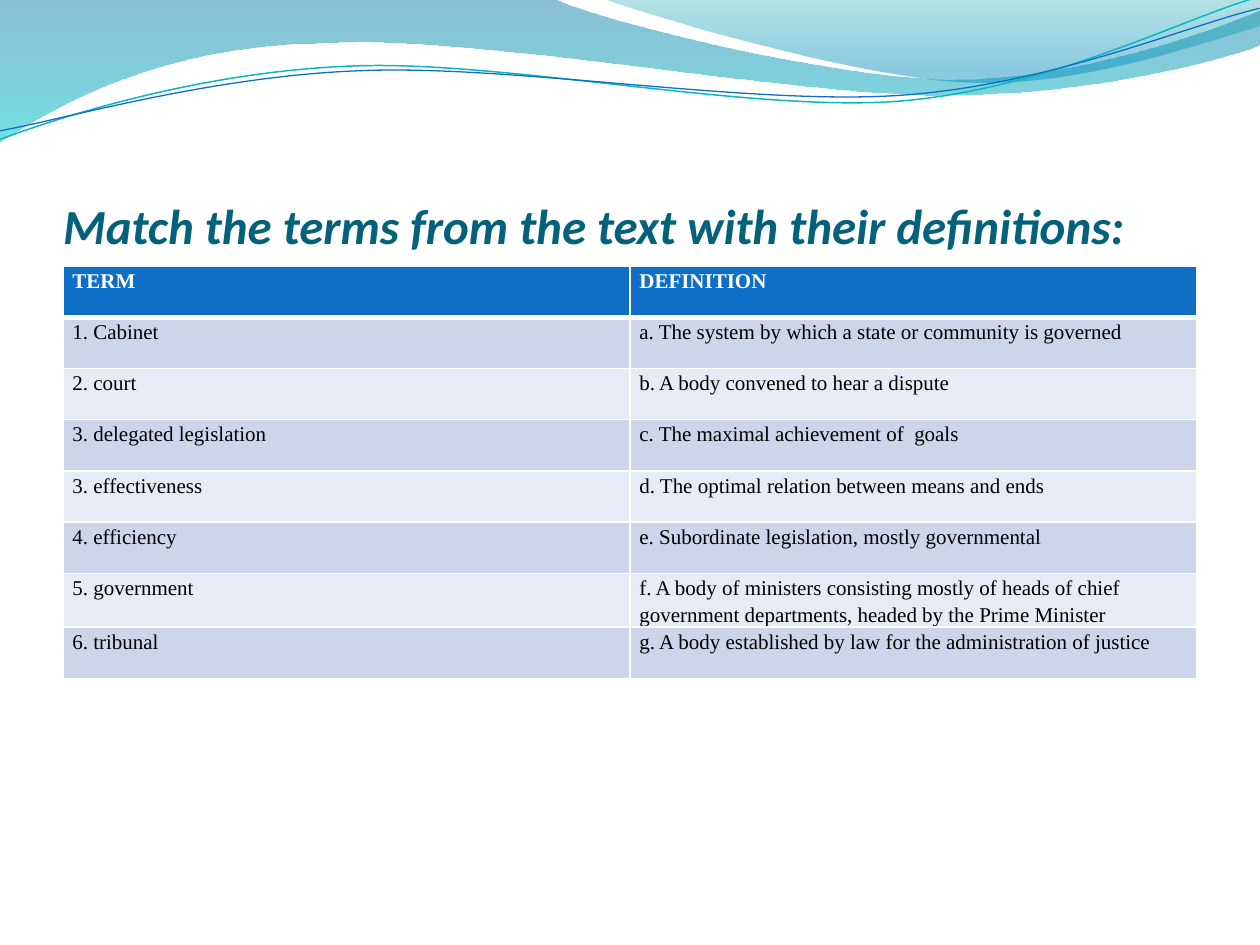
from lxml.etree import SubElement
from pptx import Presentation
from pptx.dml.color import RGBColor
from pptx.enum.text import MSO_ANCHOR, MSO_AUTO_SIZE, PP_ALIGN
from pptx.oxml.ns import qn
from pptx.util import Pt

PX = 914400 / 126
WHITE = "FFFFFF"
TILT = 357.3
ROWS = [
    ("TERM", "DEFINITION"),
    ("1. Cabinet", "a. The system by which a state or community is governed"),
    ("2. court", "b. A body convened to hear a dispute"),
    ("3. delegated legislation", "c. The maximal achievement of  goals"),
    ("3. effectiveness", "d. The optimal relation between means and ends"),
    ("4. efficiency", "e. Subordinate legislation, mostly governmental"),
    ("5. government", "f. A body of ministers consisting mostly of heads of chief "
     "government departments, headed by the Prime Minister"),
    ("6. tribunal", "g. A body established by law for the administration of justice"),
]
# Each part is an end point, or two control points and an end point, in px.
BACK = [
    [(0, -1)], [(554, -1)],
    [(600, 21), (837, 79), (955, 79)], [(1075, 79), (1207, 33), (1260, 11)],
    [(1261, 45)],
    [(1239, 55), (1096, 96), (940, 95)], [(784, 95), (481, 35), (324, 43)],
    [(161, 45), (58, 105), (-1, 142)],
]
FRONT = [
    [(604, -1)],
    [(641, 14), (859, 78), (969, 82)], [(1079, 87), (1211, 40), (1260, 26)],
    [(1260, 0)],
]
# The thin curves are given level, before their tilt.
TEAL = [
    [(-3, 110)],
    [(59, 90), (200, 52), (350, 53)], [(499, 53), (745, 118), (896, 114)],
    [(1048, 109), (1184, 45), (1260, 27)],
]
BLUE = [
    [(-2, 101)],
    [(56, 94), (207, 57), (357, 58)], [(509, 58), (750, 112), (902, 108)],
    [(1052, 104), (1188, 52), (1262, 38)],
]


def px(n):
    return round(n * PX)


def color(code):
    return RGBColor.from_string(code)


def put_text(frame, text, font, size, code, bold=False, italic=False, space=None):
    para = frame.paragraphs[0]
    para.alignment = PP_ALIGN.LEFT
    para.line_spacing = space
    run = para.add_run()
    run.text = text
    run.font.name, run.font.size = font, Pt(size)
    run.font.bold, run.font.italic = bold, italic
    run.font.color.rgb = color(code)


def bend(shape, parts):
    """Join the three lines of each curved part into one cubic curve."""
    lines = iter(list(shape._element.iter(qn("a:lnTo"))))
    for part in parts[1:]:
        first, *rest = [next(lines) for _ in part]
        if rest:
            first.tag = qn("a:cubicBezTo")
            for line in rest:
                first.append(line[0])
                line.getparent().remove(line)


def add_path(slide, parts, close):
    start, *rest = [(px(x), px(y)) for part in parts for x, y in part]
    pen = slide.shapes.build_freeform(*start, scale=1.0)
    pen.add_line_segments(rest, close=close)
    shape = pen.convert_to_shape()
    shape.shadow.inherit = False
    bend(shape, parts)
    return shape


def add_wave(slide, parts, stops):
    """Add a filled wave; stops hold position, colour and opacity in percent."""
    shape = add_path(slide, parts, True)
    shape.line.fill.background()
    shape.fill.gradient()
    shape.fill.gradient_angle = 270
    for stop, (place, code, _) in zip(shape.fill.gradient_stops, stops):
        stop.position = place
        stop.color.rgb = color(code)
    tints = shape._element.spPr.find(qn("a:gradFill")).iter(qn("a:srgbClr"))
    for tint, (_, _, alpha) in zip(tints, stops):
        SubElement(tint, qn("a:alpha"), val=str(alpha * 1000))


def add_curve(slide, parts, code, width):
    shape = add_path(slide, parts, False)
    shape.fill.background()
    shape.line.color.rgb = color(code)
    shape.line.width = Pt(width)
    shape.rotation = TILT
    return shape


def set_title(slide, text):
    title = slide.shapes.title
    title.left, title.top, title.width, title.height = map(px, (63, 96, 1134, 158))
    frame = title.text_frame
    frame.auto_size = MSO_AUTO_SIZE.NONE
    frame.word_wrap = True
    frame.vertical_anchor = MSO_ANCHOR.BOTTOM
    frame.margin_left = frame.margin_right = frame.margin_bottom = 0
    frame.margin_top = px(6)
    put_text(frame, text, "Calibri", 28, "04617B", bold=True, italic=True)


def set_edge(cell, side, width):
    edge = SubElement(cell._tc.get_or_add_tcPr(), qn(f"a:ln{side}"), w=str(Pt(width)))
    fill = SubElement(edge, qn("a:solidFill"))
    SubElement(fill, qn("a:srgbClr"), val=WHITE)


def fill_cell(cell, text, row):
    head = row == 0
    widths = {"L": 1, "R": 1, "T": 3 if row == 1 else 1, "B": 3 if head else 1}
    for side, width in widths.items():
        set_edge(cell, side, width)
    cell.fill.solid()
    cell.fill.fore_color.rgb = color(
        "0F6FC6" if head else "CCD5EA" if row % 2 else "E7EBF5")
    cell.margin_left = cell.margin_right = Pt(5.4)
    cell.margin_top = cell.margin_bottom = 0
    put_text(cell.text_frame, text, "Times New Roman", 12,
             WHITE if head else "000000", bold=head, space=1.15)


def add_terms(slide):
    high = px(410)
    table = slide.shapes.add_table(len(ROWS), 2, px(63), px(266), px(1134), high).table
    table.horz_banding = False
    for r, texts in enumerate(ROWS):
        table.rows[r].height = high // len(ROWS)
        for c, text in enumerate(texts):
            fill_cell(table.cell(r, c), text, r)


def main():
    deck = Presentation()
    deck.slide_width, deck.slide_height = px(1260), px(945)
    slide = deck.slides.add_slide(deck.slide_layouts[5])
    add_wave(slide, BACK, [(0, "0074A1", 45), (1, "00C6CF", 55)])
    add_wave(slide, FRONT, [(0, "00A1A9", 30), (0.8, "008BBF", 45)])
    slide.shapes.add_group_shape([
        add_curve(slide, TEAL, "0AB8BF", 0.85),
        add_curve(slide, BLUE, "0F6FC6", 0.75),
    ])
    set_title(slide, "Match the terms from the text with their definitions:")
    add_terms(slide)
    deck.save("out.pptx")


if __name__ == "__main__":
    main()
